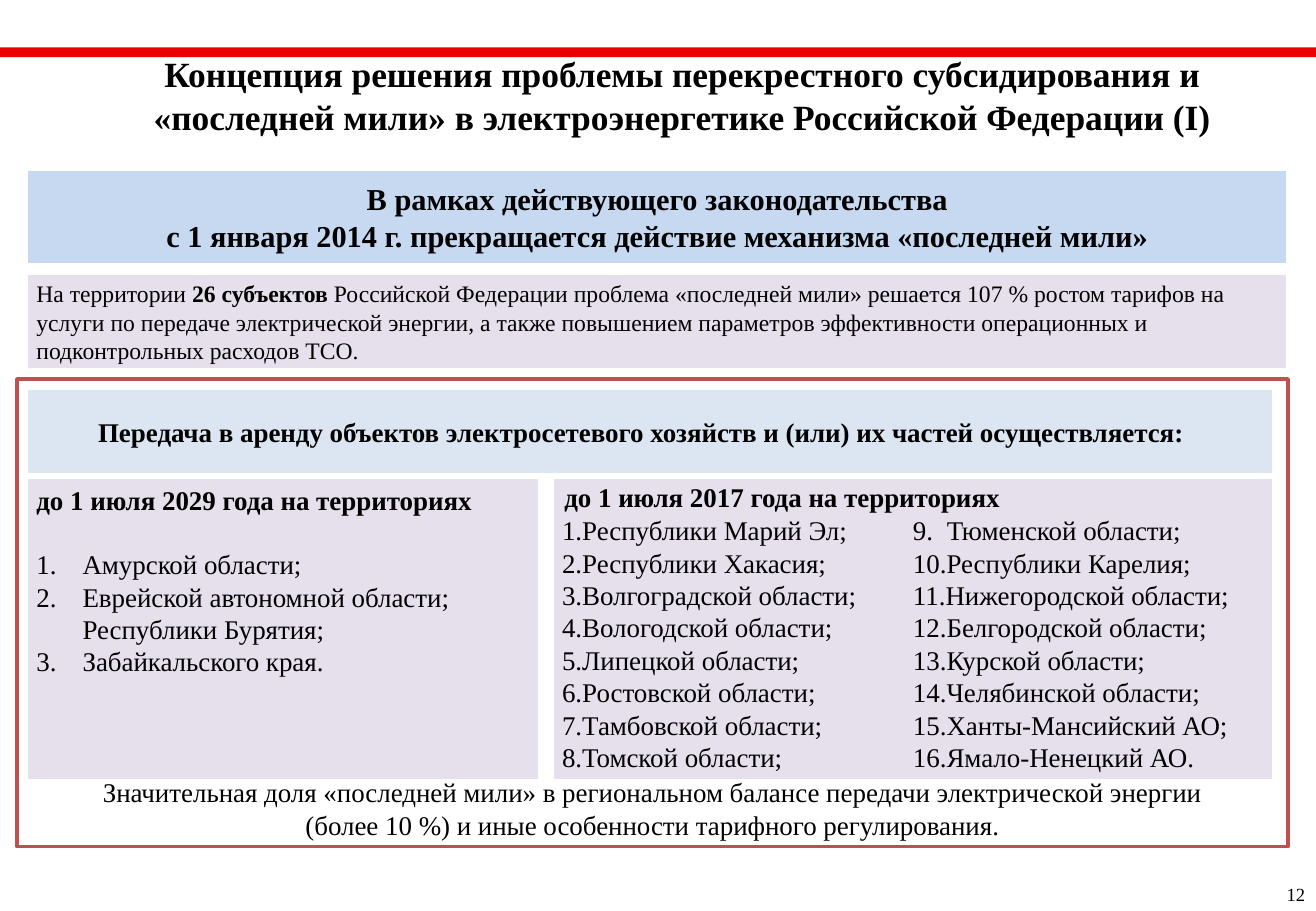
from dataclasses import dataclass

from lxml import etree
from pptx import Presentation, util as u
from pptx.dml import color
from pptx.enum import shapes, text
from pptx.oxml import ns

IN = u.Inches
MID, LOW = text.MSO_ANCHOR.MIDDLE, text.MSO_ANCHOR.BOTTOM
CENTER = text.PP_ALIGN.CENTER


@dataclass(frozen=True)
class Theme:
    font: str = "Times New Roman"
    ink: str = "000000"
    white: str = "FFFFFF"
    bar: str = "EB0000"
    frame: str = "C0504D"
    blue: str = "C6D9F1"
    pale: str = "DCE6F2"
    lilac: str = "E6E0EC"
    title: int = 21
    lead: int = 18
    body: int = 16
    note: int = 14
    page: int = 11


T = Theme()
LEFT = ["Амурской области;", "Еврейской автономной области; Республики Бурятия;",
        "Забайкальского края."]
RIGHT = ["Республики Марий Эл;", "Республики Хакасия;", "Волгоградской области;",
         "Вологодской области;", "Липецкой области;", "Ростовской области;",
         "Тамбовской области;", "Томской области;", "Тюменской области;",
         "Республики Карелия;", "Нижегородской области;", "Белгородской области;",
         "Курской области;", "Челябинской области;", "Ханты-Мансийский АО;",
         "Ямало-Ненецкий АО."]


def apply(item, form):
    for name, value in form.items():
        setattr(item, name, value)


def place(item, box):
    apply(item, dict(zip(("left", "top", "width", "height"), map(IN, box))))


def rgb(code):
    return color.RGBColor.from_string(code)


def paint(item, fill, line=T.white):
    """Fill and outline a shape; a fill of None leaves it clear."""
    if fill:
        item.fill.solid()
        item.fill.fore_color.rgb = rgb(fill)
    else:
        item.fill.background()
    item.line.color.rgb = rgb(line)
    item.line.width = u.Pt(2)


def setup(item, pad=(0.1, 0.05, 0.1, 0.05), anchor=text.MSO_ANCHOR.TOP, wrap=True):
    sides = ("margin_left", "margin_top", "margin_right", "margin_bottom")
    frame = item.text_frame
    apply(frame, dict(zip(sides, map(IN, pad))))
    apply(frame, {"word_wrap": wrap, "auto_size": text.MSO_AUTO_SIZE.NONE,
                  "vertical_anchor": anchor})
    return frame


def indent(para, left, first, bullet="buNone", tab=None):
    """Set margins in inches, then the bullet and an optional tab stop."""
    props = para._p.get_or_add_pPr()
    props.set("marL", str(IN(left)))
    props.set("indent", str(IN(first)))
    mark = etree.SubElement(props, ns.qn("a:" + bullet))
    if bullet == "buAutoNum":
        mark.set("type", "arabicPeriod")
    if tab:
        stops = etree.SubElement(props, ns.qn("a:tabLst"))
        etree.SubElement(stops, ns.qn("a:tab"), pos=str(IN(tab)), algn="l")


def write(frame, parts, size, bold=False, align=text.PP_ALIGN.LEFT, gap=0, **dent):
    """Add one paragraph; each part is plain text or a (text, bold) pair."""
    para = frame.paragraphs[0]
    if para.runs:
        para = frame.add_paragraph()
    indent(para, **(dent or {"left": 0, "first": 0}))
    apply(para, {"alignment": align, "space_before": u.Pt(gap), "space_after": u.Pt(0)})
    for part in parts:
        words, heavy = part if isinstance(part, tuple) else (part, bold)
        run = para.add_run()
        run.text = words
        apply(run.font, {"name": T.font, "size": u.Pt(size), "bold": heavy})
        run.font.color.rgb = rgb(T.ink)


def panel(slide, box, fill, line=T.white, **form):
    """Draw a rectangle and return its text frame."""
    item = slide.shapes.add_shape(shapes.MSO_SHAPE.RECTANGLE, *map(IN, box))
    item.shadow.inherit = False
    paint(item, fill, line)
    return setup(item, **form)


def label(slide, box, words, size, bold=False, wrap=True):
    item = slide.shapes.add_textbox(*map(IN, box))
    write(setup(item, wrap=wrap), [words], size, bold)


def header(slide, x, y, w):
    bar = slide.shapes.add_shape(shapes.MSO_SHAPE.RECTANGLE,
                                 IN(x), IN(y), IN(w), IN(0.08))
    bar.shadow.inherit = False
    paint(bar, T.bar)
    bar.line.fill.background()
    title = slide.shapes.title
    place(title, (x + 1.1, y - 0.01, w - 1.8, 0.81))
    write(setup(title), ["Концепция решения проблемы перекрестного субсидирования и "
                         "«последней мили» в электроэнергетике Российской Федерации (I)"],
          T.title, True, CENTER)


def intro(slide, x, y, w):
    lead = panel(slide, (x, y, w, 0.79), T.blue, anchor=MID)
    for line in ("В рамках действующего законодательства",
                 "с 1 января 2014 г. прекращается действие механизма «последней мили»"):
        write(lead, [line], T.lead, True, CENTER)
    note = panel(slide, (x, y + 0.86, w, 0.79), T.lilac, pad=(0.08, 0.05, 0.08, 0.05))
    write(note, ["На территории ", ("26 субъектов ", True),
                 "Российской Федерации проблема «последней мили» решается 107 % ростом "
                 "тарифов на услуги по передаче электрической энергии, а также повышением "
                 "параметров эффективности операционных и подконтрольных расходов ТСО."],
          T.note)


def until2029(item, box):
    place(item, box)
    paint(item, T.lilac)
    frame = setup(item, (0.08, 0.05, 0.04, 0.05))
    write(frame, ["до 1 июля 2029 года на территориях"], T.body, True)
    for i, name in enumerate(LEFT):
        write(frame, [name], T.body, gap=0 if i else 19,
              left=0.38, first=-0.38, bullet="buAutoNum")


def until2017(slide, item, box):
    """Two columns of regions under a heading."""
    x, y, w, h = box
    place(item, box)
    paint(item, T.lilac)
    frame = setup(item, (0.08, 0.3, 0.08, 0.05))
    frame._txBody.bodyPr.set("numCol", "2")
    for num, name in enumerate(RIGHT, 1):
        gap = "\t" if num == 9 else ""
        write(frame, [f"{num}.{gap}{name}"], T.body, left=0.28, first=-0.28, tab=0.28)
    label(slide, (x, y - 0.02, w - 0.15, 0.37),
          "до 1 июля 2017 года на территориях", T.body, True)


def lease(slide, x, y, w, h):
    """Framed block: heading, two lists and a closing remark."""
    frame = panel(slide, (x, y, w, h), None, T.frame, anchor=LOW)
    for line in ("Значительная доля «последней мили» в региональном балансе "
                 "передачи электрической энергии",
                 "(более 10 %) и иные особенности тарифного регулирования."):
        write(frame, [line], T.body, align=CENTER)
    head = panel(slide, (x + 0.08, y + 0.08, w - 0.2, 0.71), T.pale, anchor=MID)
    write(head, ["Передача в аренду объектов электросетевого хозяйств и (или) "
                 "их частей осуществляется:"], T.body, True, left=0, first=0.49)
    one, two = list(slide.placeholders)[1:3]
    until2029(one, (x + 0.08, y + 0.81, 4.23, 2.5))
    until2017(slide, two, (x + 4.41, y + 0.81, w - 4.53, 2.5))


def main():
    deck = Presentation()
    apply(deck, {"slide_width": IN(10.84), "slide_height": IN(7.5)})
    slide = deck.slides.add_slide(deck.slide_layouts[3])
    header(slide, 0, 0.39, 10.84)
    intro(slide, 0.22, 1.39, 10.39)
    lease(slide, 0.14, 3.12, 10.47, 3.85)
    label(slide, (10.5, 7.22, 0.36, 0.29), "12", T.page, wrap=False)
    deck.save("out.pptx")


if __name__ == "__main__":
    main()
